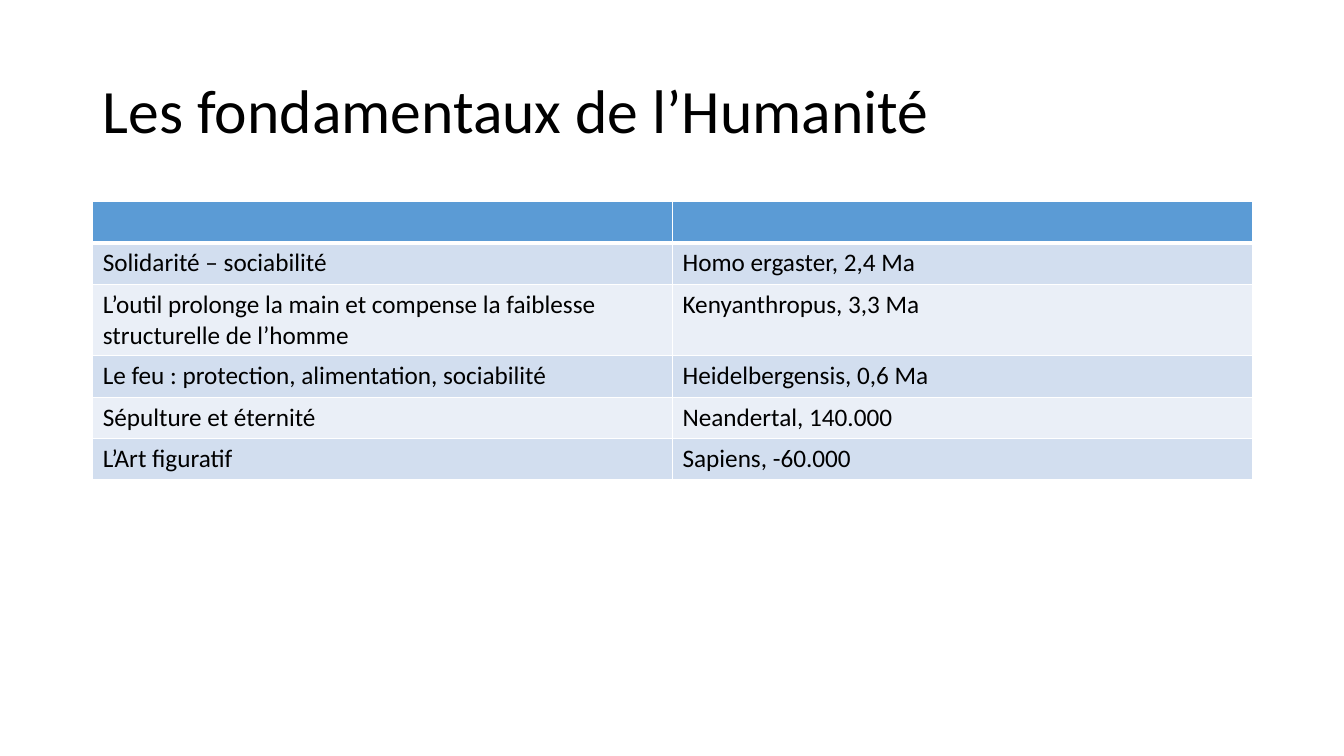
from lxml.etree import SubElement
from pptx import Presentation
from pptx.dml.color import RGBColor
from pptx.enum.text import MSO_ANCHOR, PP_ALIGN
from pptx.oxml.ns import qn
from pptx.util import Inches, Pt

FONT = "Calibri"
BLACK = "000000"
WHITE = "FFFFFF"
HEADER_FILL = "5B9BD5"
BAND_FILLS = ("D2DEEF", "EAEFF7")
ROW_HEIGHT = 0.41
MILESTONES = [
    ("", ""),
    ("Solidarité – sociabilité", "Homo ergaster, 2,4 Ma"),
    ("L’outil prolonge la main et compense la faiblesse structurelle de l’homme",
     "Kenyanthropus, 3,3 Ma"),
    ("Le feu : protection, alimentation, sociabilité", "Heidelbergensis, 0,6 Ma"),
    ("Sépulture et éternité", "Neandertal, 140.000"),
    ("L’Art figuratif", "Sapiens, -60.000"),
]


def rgb(value):
    return RGBColor.from_string(value)


def format_text(frame, size):
    for paragraph in frame.paragraphs:
        for run in paragraph.runs:
            run.font.name = FONT
            run.font.size = Pt(size)
            run.font.bold = False
            run.font.color.rgb = rgb(BLACK)


def add_border(cell, side, width):
    border = SubElement(cell._tc.get_or_add_tcPr(), qn(f"a:{side}"), w=str(Pt(width)))
    fill = SubElement(border, qn("a:solidFill"))
    SubElement(fill, qn("a:srgbClr"), val=WHITE)


def place_heading(slide, left, top, width, height):
    heading = slide.shapes.title
    heading.left, heading.top = Inches(left), Inches(top)
    heading.width, heading.height = Inches(width), Inches(height)
    frame = heading.text_frame
    frame.text = "Les fondamentaux de l’Humanité"
    frame.vertical_anchor = MSO_ANCHOR.MIDDLE
    frame.paragraphs[0].alignment = PP_ALIGN.LEFT
    frame.paragraphs[0].line_spacing = 0.9
    format_text(frame, 44)


def place_milestones(slide, left, top, width):
    milestones = slide.shapes.add_table(
        len(MILESTONES), 2, Inches(left), Inches(top),
        Inches(width), Inches(ROW_HEIGHT * len(MILESTONES))).table
    for column in milestones.columns:
        column.width = Inches(width / 2)
    for index, (row, entries) in enumerate(zip(milestones.rows, MILESTONES)):
        row.height = Inches(ROW_HEIGHT)
        fill = BAND_FILLS[(index - 1) % 2] if index else HEADER_FILL
        for cell, entry in zip(row.cells, entries):
            add_border(cell, "lnL", 1)
            add_border(cell, "lnR", 1)
            add_border(cell, "lnT", 3 if index == 1 else 1)
            add_border(cell, "lnB", 3 if index == 0 else 1)
            cell.fill.solid()
            cell.fill.fore_color.rgb = rgb(fill)
            if entry:
                cell.text_frame.text = entry
                format_text(cell.text_frame, 18)


def main():
    presentation = Presentation()
    presentation.slide_width = Inches(13.33)
    presentation.slide_height = Inches(7.5)
    slide = presentation.slides.add_slide(presentation.slide_layouts[5])
    place_heading(slide, 0.92, 0.4, 11.5, 1.45)
    place_milestones(slide, 0.92, 2, 11.5)
    presentation.save("out.pptx")


if __name__ == "__main__":
    main()
